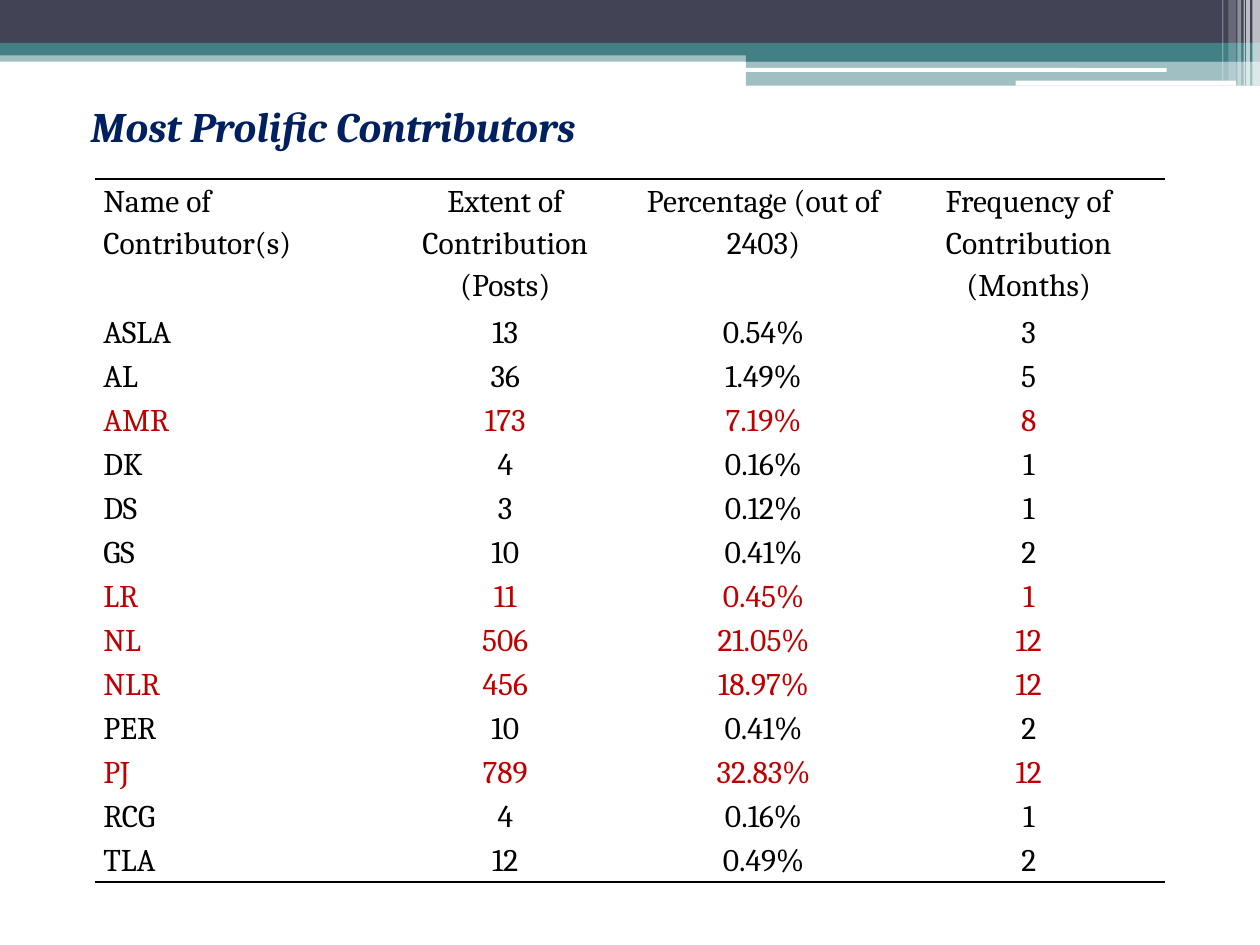
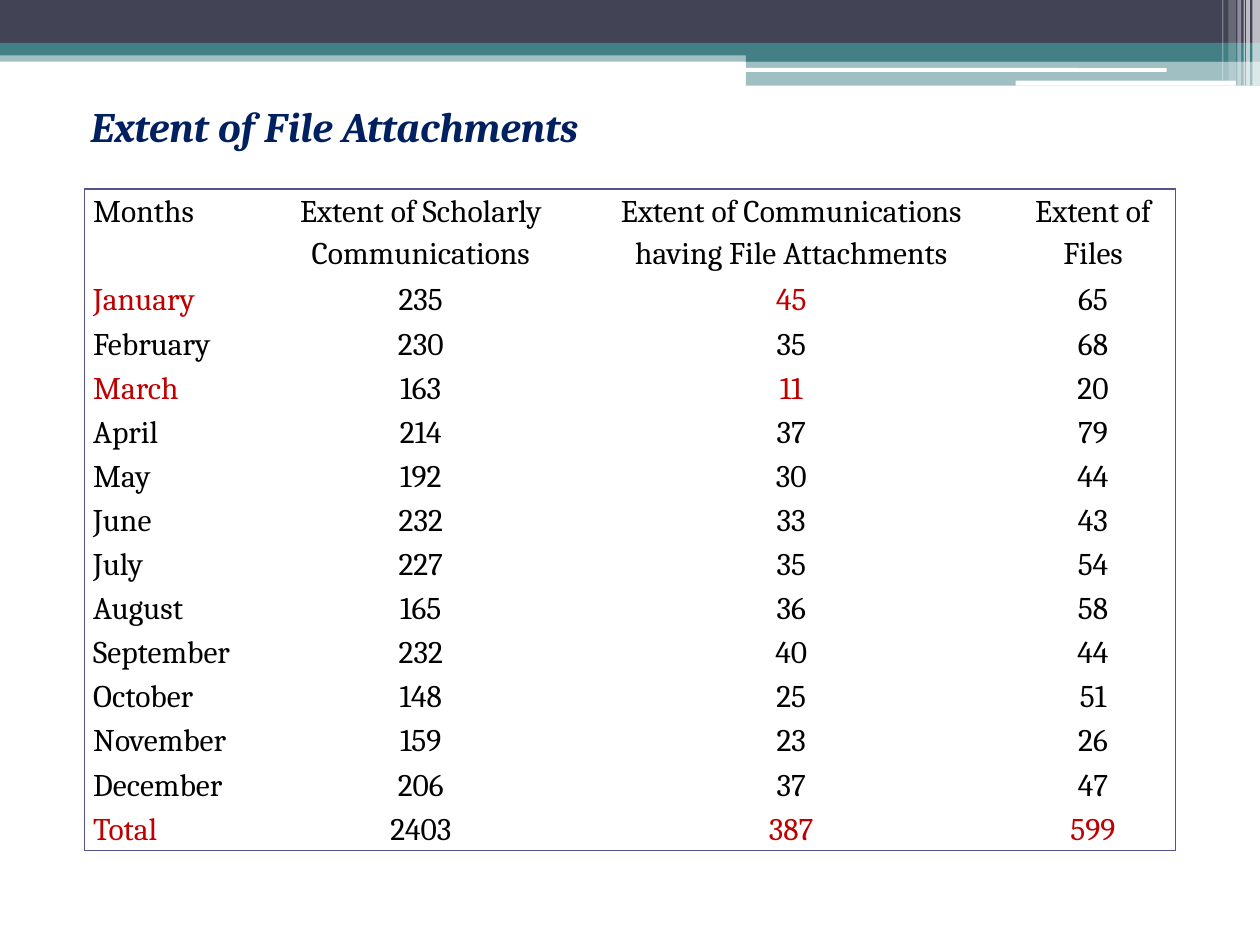
from collections import namedtuple
from dataclasses import dataclass

from lxml import etree
from pptx import Presentation
from pptx.dml.color import RGBColor
from pptx.enum.shapes import MSO_SHAPE
from pptx.enum.text import PP_ALIGN
from pptx.oxml.ns import qn
from pptx.util import Inches, Pt

RECT, ROUND = MSO_SHAPE.RECTANGLE, MSO_SHAPE.ROUNDED_RECTANGLE
LEFT, MID = PP_ALIGN.LEFT, PP_ALIGN.CENTER
PLAIN = "{2D5ABB26-0587-4C30-8999-92F81FD0307C}"  # no style, no grid

COLS, ROWS = 1000, 750  # slide grid
CELL = Inches(10) / COLS

Box = namedtuple("Box", "x y w h")
Edge = namedtuple("Edge", "sides color width")


@dataclass(frozen=True)
class Theme:
    font: str = "Cambria"
    head: int = 24
    body: int = 18
    lead: float = 1.15
    ink: str = "000000"
    mark: str = "C00000"
    title: str = "002060"
    dark: str = "424456"
    teal: str = "438086"
    white: str = "FFFFFF"
    frame: str = "53548A"


THEME = Theme()
FULL = Box(0, 0, COLS, ROWS)
BAND = Box(0, 0, COLS, 68)
TITLE = Box(50, 75, 900, 60)


def grid(count):
    return round(count * CELL)


def place(box, x, y, w, h):
    """Turn a part of a box into slide lengths."""
    return [grid(n) for n in (box.x + x, box.y + y, w, h)]


def write(frame, text, size=THEME.body, color=THEME.ink, align=LEFT,
          bold=False, italic=False, lead=None, before=0):
    """Fill a text frame, one paragraph for each line of text."""
    for i, line in enumerate(text.split("\n")):
        para = frame.add_paragraph() if i else frame.paragraphs[0]
        para.alignment = align
        para.line_spacing = lead
        para.space_before = Pt(before)
        run = para.add_run()
        run.text = line
        font = run.font
        font.name, font.size = THEME.font, Pt(size)
        font.bold, font.italic = bold, italic
        font.color.rgb = RGBColor.from_string(color)


def block(slide, spot, color, alpha=100, kind=RECT):
    shape = slide.shapes.add_shape(kind, *spot)
    shape.shadow.inherit = False
    shape.line.fill.background()
    shape.fill.solid()
    shape.fill.fore_color.rgb = RGBColor.from_string(color)
    if alpha < 100:
        tint = next(shape.element.spPr.iter(qn("a:srgbClr")))
        etree.SubElement(tint, qn("a:alpha"), val=str(alpha * 1000))


def draw_band(slide, box):
    step = 592  # where the deeper right part starts
    rest = box.w - step
    for x, y, w, h, color, alpha in (
        (0, 40, box.w, 9, THEME.teal, 50),
        (0, 0, box.w, 34, THEME.dark, 100),
        (0, 34, box.w, 10, THEME.teal, 100),
        (step, 39, rest, 10, THEME.teal, 100),
        (step, 48, rest, 20, THEME.teal, 50),
    ):
        block(slide, place(box, x, y, w, h), color, alpha)
    for x, y, w, h in ((591, 54, 335, 3), (806, 64, 175, 4)):
        block(slide, place(box, x, y, w, h), THEME.white, kind=ROUND)
    # Light stripes, measured back from the right edge
    for back, w, h, alpha in (
        (6, 6, 68, 65), (11, 3, 68, 65), (13, 1, 68, 60),
        (18, 3, 68, 40), (25, 6, 64, 20), (30, 1, 64, 30),
    ):
        block(slide, place(box, box.w - back, 0, w, h), THEME.white, alpha)


def draw_title(slide, box, text):
    area = slide.shapes.add_textbox(*place(box, 0, 0, box.w, box.h))
    frame = area.text_frame
    frame.word_wrap = True
    frame.margin_left = grid(22)
    write(frame, text, size=THEME.head, color=THEME.title,
          bold=True, italic=True, before=3)


def rule(cell, side, edge):
    """Draw one border of a table cell."""
    line = etree.SubElement(cell._tc.get_or_add_tcPr(), qn("a:ln" + side),
                            w=str(Pt(edge.width)))
    fill = etree.SubElement(line, qn("a:solidFill"))
    etree.SubElement(fill, qn("a:srgbClr"), val=edge.color)


def draw_table(slide, box, widths, top, rows, marks, edge):
    """Draw rows under a header of height top; marks maps names to red columns."""
    area = slide.shapes.add_table(
        len(rows), len(widths), *place(box, 0, 0, box.w, box.h))
    next(area.element.iter(qn("a:tableStyleId"))).text = PLAIN
    table = area.table
    table.first_row = table.horz_banding = False
    for col, wide in zip(table.columns, widths):
        col.width = grid(wide)
    last, end = len(rows) - 1, len(widths) - 1
    for r, row in enumerate(rows):
        table.rows[r].height = grid((box.h - top) / last if r else top)
        for c, text in enumerate(row):
            cell = table.cell(r, c)
            cell.margin_left = cell.margin_right = grid(7)
            cell.margin_top = cell.margin_bottom = 0
            red = c in marks.get(row[0], ())
            write(cell.text_frame, text, lead=THEME.lead,
                  color=THEME.mark if red else THEME.ink,
                  align=MID if c else LEFT)
            outer = {"L": c == 0, "R": c == end, "T": r == 0, "B": r == last}
            for side, here in outer.items():
                if here and side in edge.sides:
                    rule(cell, side, edge)
            cell.fill.background()


def add_page(deck, title, x, y, high, widths, **data):
    slide = deck.slides.add_slide(deck.slide_layouts[6])
    draw_band(slide, BAND)
    draw_title(slide, TITLE, title)
    draw_table(slide, Box(x, y, sum(widths), high), widths, **data)


POSTS = [
    ("Name of Contributor(s)", "Extent of Contribution (Posts)",
     "Percentage (out of 2403)", "Frequency of Contribution\n(Months)"),
    ("ASLA", "13", "0.54%", "3"),
    ("AL", "36", "1.49%", "5"),
    ("AMR", "173", "7.19%", "8"),
    ("DK", "4", "0.16%", "1"),
    ("DS", "3", "0.12%", "1"),
    ("GS", "10", "0.41%", "2"),
    ("LR", "11", "0.45%", "1"),
    ("NL", "506", "21.05%", "12"),
    ("NLR", "456", "18.97%", "12"),
    ("PER", "10", "0.41%", "2"),
    ("PJ", "789", "32.83%", "12"),
    ("RCG", "4", "0.16%", "1"),
    ("TLA", "12", "0.49%", "2"),
]

FILES = [
    ("Months", "Extent of Scholarly\nCommunications",
     "Extent of Communications having File Attachments", "Extent of Files"),
    ("January", "235", "45", "65"),
    ("February", "230", "35", "68"),
    ("March", "163", "11", "20"),
    ("April", "214", "37", "79"),
    ("May", "192", "30", "44"),
    ("June", "232", "33", "43"),
    ("July", "227", "35", "54"),
    ("August", "165", "36", "58"),
    ("September", "232", "40", "44"),
    ("October", "148", "25", "51"),
    ("November", "159", "23", "26"),
    ("December", "206", "37", "47"),
    ("Total", "2403", "387", "599"),
]


def main():
    deck = Presentation()
    deck.slide_width, deck.slide_height = grid(FULL.w), grid(FULL.h)
    add_page(
        deck, "Most Prolific Contributors", 75, 142, 558,
        (223, 206, 204, 217), top=104, rows=POSTS,
        marks=dict.fromkeys(("AMR", "LR", "NL", "NLR", "PJ"), range(4)),
        edge=Edge("TB", THEME.ink, 1))
    add_page(
        deck, "Extent of File Attachments", 67, 150, 525,
        (147, 240, 348, 131), top=70, rows=FILES,
        marks={"January": (0, 2), "March": (0, 2), "Total": (0, 2, 3)},
        edge=Edge("LRTB", THEME.frame, 0.75))
    deck.save("out.pptx")


if __name__ == "__main__":
    main()
